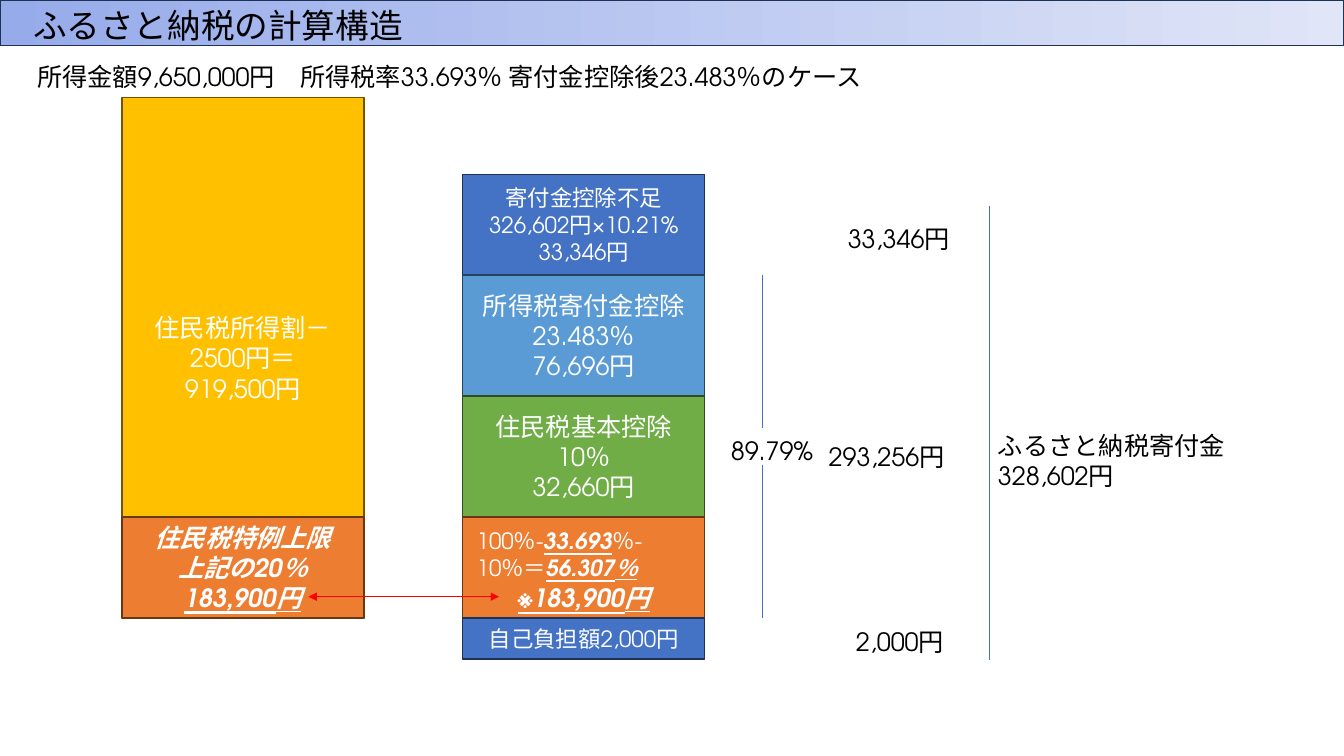
from lxml.etree import SubElement
from pptx import Presentation
from pptx.dml.color import RGBColor
from pptx.enum.shapes import MSO_CONNECTOR, MSO_SHAPE
from pptx.enum.text import MSO_ANCHOR, PP_ALIGN
from pptx.oxml.ns import qn
from pptx.util import Pt

PX = 9144
LATIN = "TeX Gyre Adventor"
JAPANESE = "Noto Sans CJK JP"


def color(value):
    return RGBColor.from_string(value)


def write(shape, paragraphs, size, ink, name=LATIN, align=PP_ALIGN.LEFT):
    frame = shape.text_frame
    frame.word_wrap = True
    for index, runs in enumerate(paragraphs):
        paragraph = frame.paragraphs[0] if index == 0 else frame.add_paragraph()
        paragraph.alignment = align
        paragraph.font.size = Pt(size)
        paragraph.font.name = name
        paragraph.font.color.rgb = color(ink)
        defaults = paragraph._p.pPr.find(qn("a:defRPr"))
        SubElement(defaults, qn("a:ea"), typeface=JAPANESE)
        for text, style in runs:
            run = paragraph.add_run()
            run.text = text
            if "b" in style:
                run.font.bold = True
                run.font.italic = True
            if "u" in style:
                run.font.underline = True


presentation = Presentation()
presentation.slide_width = 1333 * PX
presentation.slide_height = 750 * PX
slide = presentation.slides.add_slide(presentation.slide_layouts[6])
shapes = slide.shapes

banner = shapes.add_shape(MSO_SHAPE.RECTANGLE, 0, 0, 1333 * PX, 45 * PX)
banner.shadow.inherit = False
banner.fill.gradient()
banner.fill.gradient_angle = 0
for stop, position, shade in zip(banner.fill.gradient_stops, (0, 1), ("96ABEA", "E0E5F7")):
    stop.position = position
    stop.color.rgb = color(shade)
banner.line.color.rgb = color("1E3256")
banner.line.width = Pt(1)

title = shapes.add_textbox(23 * PX, 0, 500 * PX, 50 * PX)
write(title, [[("ふるさと納税の計算構造", "")]], 24, "000000", JAPANESE)

LIMIT_LEFT, DEDUCTION_LEFT, BAR_WIDTH = 121, 459, 240
MIDDLE, BOTTOM = MSO_ANCHOR.MIDDLE, MSO_ANCHOR.BOTTOM
bars = [
    (LIMIT_LEFT, 97, 516, "FFC000", "705400", 18, MIDDLE, "",
     ["住民税所得割－2500円＝", "919,500円"]),
    (LIMIT_LEFT, 513, 100, "ED7D31", "683715", 18, MIDDLE, "b",
     ["住民税特例上限", "上記の20％", "183,900円"]),
    (DEDUCTION_LEFT, 173, 100, "4472C4", "1E3256", 16, MIDDLE, "",
     ["寄付金控除不足", "326,602円×10.21%", "33,346円"]),
    (DEDUCTION_LEFT, 273, 120, "5B9BD5", "28445D", 18, MIDDLE, "",
     ["所得税寄付金控除", "23.483％", "76,696円"]),
    (DEDUCTION_LEFT, 393, 120, "70AD47", "314C1F", 18, MIDDLE, "",
     ["住民税基本控除10％", "32,660円"]),
    (DEDUCTION_LEFT, 513, 100, "ED7D31", "683715", 18, BOTTOM, "b", ["※183,900円"]),
    (DEDUCTION_LEFT, 613, 41, "4472C4", "1E3256", 16, MIDDLE, "", ["自己負担額2,000円"]),
]
for left, top, height, fill, outline, size, anchor, style, lines in bars:
    bar = shapes.add_shape(MSO_SHAPE.RECTANGLE, left * PX, top * PX, BAR_WIDTH * PX, height * PX)
    bar.shadow.inherit = False
    bar.fill.solid()
    bar.fill.fore_color.rgb = color(fill)
    bar.line.color.rgb = color(outline)
    bar.line.width = Pt(1)
    bar.text_frame.vertical_anchor = anchor
    paragraphs = [[(line, style)] for line in lines]
    if style:
        paragraphs[-1] = [(lines[-1], "bu")]
    write(bar, paragraphs, size, "FFFFFF", align=PP_ALIGN.CENTER)

rate = shapes.add_textbox(463 * PX, 518 * PX, 221 * PX, 64 * PX)
rate_runs = [("100％-", ""), ("33.693", "bu"), ("％-10％＝", ""), ("56.307％", "bu")]
write(rate, [rate_runs], 16, "FFFFFF")

labels = [
    (27, 56, 1165, 40, ["所得金額9,650,000円\u3000所得税率33.693％ 寄付金控除後23.483％のケース".replace("\u3000", "　")]),
    (715, 427, 209, 71, ["89.79%"]),
    (812, 433, 209, 101, ["293,256円"]),
    (839, 616, 209, 40, ["2,000円"]),
    (831, 217, 209, 40, ["33,346円"]),
    (980, 422, 260, 101, ["ふるさと納税寄付金", "328,602円"]),
]
for left, top, width, height, lines in labels:
    label = shapes.add_textbox(left * PX, top * PX, width * PX, height * PX)
    write(label, [[(line, "")] for line in lines], 18, "000000")

connectors = [
    (756, 273, 756, 425, "4472C4", False),
    (756, 461, 756, 613, "4472C4", False),
    (981, 204, 981, 655, "4472C4", False),
    (306, 592, 495, 592, "FF0000", True),
]
for start_x, start_y, end_x, end_y, ink, arrows in connectors:
    connector = shapes.add_connector(
        MSO_CONNECTOR.STRAIGHT, start_x * PX, start_y * PX, end_x * PX, end_y * PX)
    connector.line.color.rgb = color(ink)
    connector.line.width = Pt(0.5)
    properties = connector._element.spPr
    if arrows:
        for end in ("a:headEnd", "a:tailEnd"):
            SubElement(properties.find(qn("a:ln")), qn(end), type="triangle")
    SubElement(properties, qn("a:effectLst"))

presentation.save("out.pptx")
